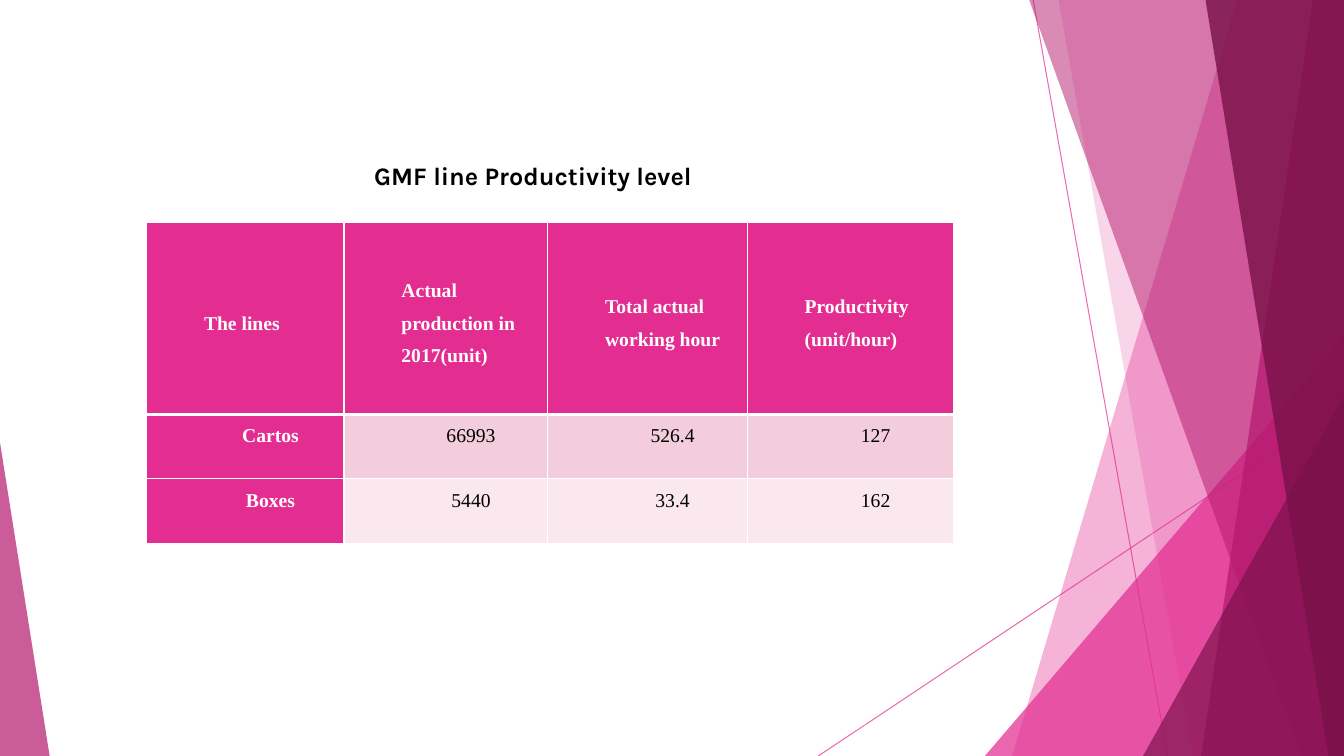
from lxml.etree import SubElement as Sub
from pptx import Presentation
from pptx.dml.color import RGBColor
from pptx.enum.shapes import MSO_CONNECTOR as Conn, MSO_SHAPE as Shape
from pptx.enum.text import MSO_ANCHOR as Anchor, PP_ALIGN as Align
from pptx.oxml.ns import qn
from pptx.util import Pt

WIDE, HIGH = 960, 540
PINK, ROSE, PLUM = "E32D91", "B4186E", "781049"
WHITE, BLACK = "FFFFFF", "000000"
BANDS = ["F4CDDC", "FAE8EE"]
COLS = [141, 145.5, 142.5, 147.5]
ROWS = [137.5, 46, 46]
DATA = [
    ["The lines", "Actual production in 2017(unit)",
     "Total actual working hour", "Productivity\n(unit/hour)"],
    ["Cartos", "66993", "526.4", "127"],
    ["Boxes", "5440", "33.4", "162"],
]


def paint(fill, color, alpha=100):
    """Fill with a colour; alpha is the opacity in percent."""
    fill.solid()
    fill.fore_color.rgb = RGBColor.from_string(color)
    if alpha < 100:
        tint = fill._xPr.find(".//" + qn("a:srgbClr"))
        Sub(tint, qn("a:alpha"), val=str(alpha * 1000))


def write(frame, text, size=14, font="Times New Roman", color=BLACK,
          bold=False, align=Align.LEFT, space=1.0, indent=0):
    frame.text = text
    for para in frame.paragraphs:
        para.alignment = align
        para.line_spacing = space
        props = para._p.get_or_add_pPr()
        props.set("marL", str(Pt(indent)))
        props.set("indent", "0")
        for run in para.runs:
            run.font.size = Pt(size)
            run.font.name = font
            run.font.bold = bold
            run.font.color.rgb = RGBColor.from_string(color)


def finish(shape, color, alpha):
    shape.shadow.inherit = False
    paint(shape.fill, color, alpha)
    shape.line.fill.background()


def add_line(shapes, *ends):
    line = shapes.add_connector(Conn.STRAIGHT, *map(Pt, ends))
    line.line.width = Pt(0.75)
    paint(line.line.fill, PINK, 70)
    Sub(line._element.spPr, qn("a:effectLst"))


def add_band(shapes, top, foot, color, alpha, right=WIDE):
    """Draw a strip from a slanted left edge to the slide's right edge."""
    pen = shapes.build_freeform(Pt(top), Pt(-0.6), scale=1.0)
    pen.add_line_segments([(Pt(x), Pt(y)) for x, y in
                           [(right, -0.6), (right, HIGH), (foot, HIGH)]])
    finish(pen.convert_to_shape(), color, alpha)


def add_wedge(shapes, left, top, width, tip, color, alpha):
    wedge = shapes.add_shape(Shape.ISOSCELES_TRIANGLE, Pt(left), Pt(top),
                             Pt(width), Pt(HIGH - top))
    wedge.adjustments[0] = tip
    finish(wedge, color, alpha)


def add_edges(cell, top, bottom):
    props = cell._tc.get_or_add_tcPr()
    for side, width in zip("LRTB", [1, 1, top, bottom]):
        edge = Sub(props, qn("a:ln" + side), w=str(Pt(width)))
        Sub(Sub(edge, qn("a:solidFill")), qn("a:srgbClr"), val=WHITE)


def add_grid(shapes):
    grid = shapes.add_table(len(ROWS), len(COLS), Pt(104.75), Pt(158.5),
                            Pt(sum(COLS)), Pt(sum(ROWS))).table
    for col, width in zip(grid.columns, COLS):
        col.width = Pt(width)
    for r, (row, high) in enumerate(zip(DATA, ROWS)):
        grid.rows[r].height = Pt(high)
        for c, text in enumerate(row):
            cell = grid.cell(r, c)
            label = r == 0 or c == 0
            add_edges(cell, 3 if r == 1 else 1, 3 if r == 0 else 1)
            paint(cell.fill, PINK if label else BANDS[r - 1])
            cell.margin_left = cell.margin_right = Pt(5)
            cell.margin_top = cell.margin_bottom = 0
            cell.vertical_anchor = Anchor.TOP if r else Anchor.MIDDLE
            write(cell.text_frame, text, color=WHITE if label else BLACK,
                  bold=label, align=Align.CENTER if r else Align.LEFT,
                  space=1.5, indent=36)


def set_title(title, text):
    title.left, title.top = Pt(260), Pt(111)
    title.width, title.height = Pt(250.5), Pt(29)
    title.text_frame.word_wrap = False
    title.text_frame.vertical_anchor = Anchor.TOP
    write(title.text_frame, text, size=18, font="Karla", bold=True)


def add_decor(shapes):
    add_line(shapes, 738, 0, 834, HIGH)
    add_line(shapes, WIDE, 290, 584.5, HIGH)
    add_band(shapes, 884, 723, PINK, 36)
    add_band(shapes, 756, 852, PINK, 20)
    add_wedge(shapes, 703.5, 240, 256.5, 1, PINK, 72)
    add_band(shapes, 735, 929.5, ROSE, 50)
    add_band(shapes, 938, 858, ROSE, 70)
    add_band(shapes, 861, 949, PLUM, 80)
    add_wedge(shapes, 816.5, 283, 143.5, 1, PLUM, 66)
    add_wedge(shapes, 0, 316, 35.5, 0, ROSE, 70)


def main():
    deck = Presentation()
    deck.slide_width, deck.slide_height = Pt(WIDE), Pt(HIGH)
    slide = deck.slides.add_slide(deck.slide_layouts[5])
    add_decor(slide.shapes)
    add_grid(slide.shapes)
    set_title(slide.shapes.title, "GMF line Productivity level")
    deck.save("out.pptx")


if __name__ == "__main__":
    main()
